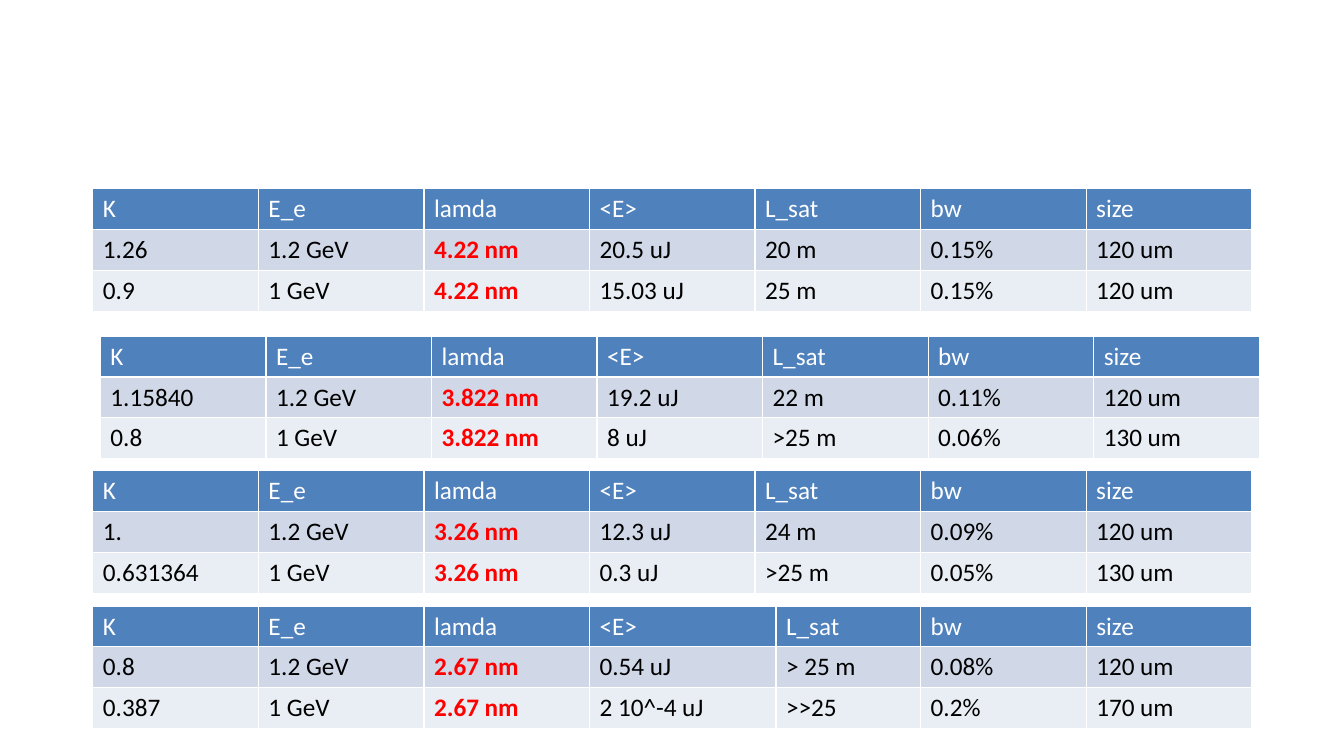
from pptx import Presentation
from pptx.dml.color import RGBColor
from pptx.util import Cm, Pt

BLANK_LAYOUT = 6
FONT = "Calibri"
HEADER_FILL = "4F81BD"
BODY_FILLS = ("D0D8E8", "E9EDF4")
WHITE, BLACK, RED = "FFFFFF", "000000", "FF0000"

ROW_HEIGHT = 1.03
COLUMN_WIDTH = 29.21 / 7
EQUAL_WIDTHS = [COLUMN_WIDTH] * 7
SHIFTED_WIDTHS = [COLUMN_WIDTH] * 3 + [4.7, 2 * COLUMN_WIDTH - 4.7] + [COLUMN_WIDTH] * 2

HEADERS = ("K", "E_e", "lamda", "<E>", "L_sat", "bw", "size")
WAVELENGTH_COLUMN = HEADERS.index("lamda")

WAVELENGTH_TABLES = (
    (2.34, 4.75, EQUAL_WIDTHS, (
        ("1.26", "1.2 GeV", "4.22 nm", "20.5 uJ", "20 m", "0.15%", "120 um"),
        ("0.9", "1 GeV", "4.22 nm", "15.03 uJ", "25 m", "0.15%", "120 um"))),
    (2.34, 15.27, SHIFTED_WIDTHS, (
        ("0.8", "1.2 GeV", "2.67 nm", "0.54 uJ", "> 25 m", "0.08%", "120 um"),
        ("0.387", "1 GeV", "2.67 nm", "2 10^-4 uJ", ">>25", "0.2%", "170 um"))),
    (2.53, 8.47, EQUAL_WIDTHS, (
        ("1.15840", "1.2 GeV", "3.822 nm", "19.2 uJ", "22 m", "0.11%", "120 um"),
        ("0.8", "1 GeV", "3.822 nm", "8 uJ", ">25 m", "0.06%", "130 um"))),
    (2.34, 11.86, EQUAL_WIDTHS, (
        ("1.", "1.2 GeV", "3.26 nm", "12.3 uJ", "24 m", "0.09%", "120 um"),
        ("0.631364", "1 GeV", "3.26 nm", "0.3 uJ", ">25 m", "0.05%", "130 um"))),
)


def paint(color_format, hex_color):
    """Set a colour format from a hex string."""
    color_format.rgb = RGBColor.from_string(hex_color)


def fill_cell(cell, text, fill, color, bold=False):
    """Write one run into a table cell and colour the cell."""
    cell.fill.solid()
    paint(cell.fill.fore_color, fill)
    span = cell.text_frame.paragraphs[0].add_run()
    span.text = text
    span.font.name = FONT
    span.font.size = Pt(18)
    span.font.bold = bold
    paint(span.font.color, color)


def add_wavelength_table(page, left, top, widths, body_rows):
    """Add a table that compares beam energies at one wavelength."""
    row_count = len(body_rows) + 1
    table = page.shapes.add_table(
        row_count, len(HEADERS), Cm(left), Cm(top),
        Cm(sum(widths)), Cm(ROW_HEIGHT * row_count)).table
    for column, width in zip(table.columns, widths):
        column.width = Cm(width)
    for row in table.rows:
        row.height = Cm(ROW_HEIGHT)
    for column_index, header in enumerate(HEADERS):
        fill_cell(table.cell(0, column_index), header, HEADER_FILL, WHITE)
    for row_index, (values, fill) in enumerate(zip(body_rows, BODY_FILLS), 1):
        for column_index, value in enumerate(values):
            highlighted = column_index == WAVELENGTH_COLUMN
            fill_cell(table.cell(row_index, column_index), value, fill,
                      RED if highlighted else BLACK, highlighted)


def main():
    """Build the slide and save the deck."""
    deck = Presentation()
    deck.slide_width, deck.slide_height = Cm(33.87), Cm(19.05)
    page = deck.slides.add_slide(deck.slide_layouts[BLANK_LAYOUT])
    for left, top, widths, body_rows in WAVELENGTH_TABLES:
        add_wavelength_table(page, left, top, widths, body_rows)
    deck.save("out.pptx")


if __name__ == "__main__":
    main()
